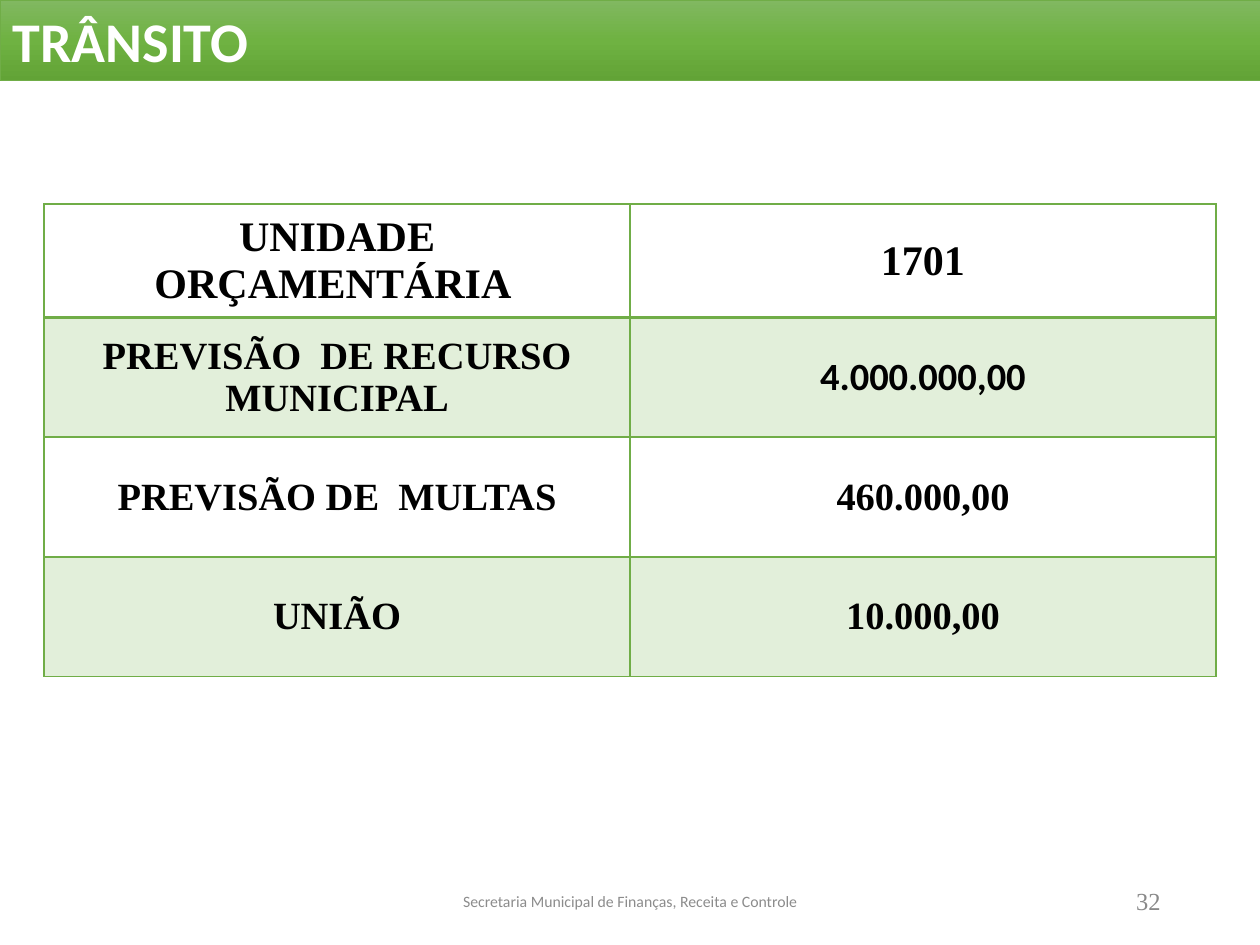
from copy import deepcopy

from lxml import etree
from pptx import Presentation
from pptx.dml.color import RGBColor
from pptx.enum.text import MSO_ANCHOR, MSO_AUTO_SIZE, PP_ALIGN
from pptx.oxml.ns import qn
from pptx.util import Inches, Pt

LEFT, CENTER, RIGHT = PP_ALIGN.LEFT, PP_ALIGN.CENTER, PP_ALIGN.RIGHT
MIDDLE = MSO_ANCHOR.MIDDLE
NO_AUTOFIT = MSO_AUTO_SIZE.NONE
TITLE_ONLY = 5
SANS, SERIF = "Calibri", "Times New Roman"
COLORS = {
    "green": "70AD47",
    "band": "E2EFDA",
    "white": "FFFFFF",
    "black": "000000",
    "footer": "8C8C8C",
    "number": "898989",
}
BANNER_GRADIENT = [(0, "81B861"), (0.5, "6FB242"), (1, "62A336")]
BUDGET = [
    ("UNIDADE ORÇAMENTÁRIA ", "1701"),
    ("PREVISÃO  DE RECURSO MUNICIPAL", "4.000.000,00"),
    ("PREVISÃO DE  MULTAS", "460.000,00"),
    ("UNIÃO", "10.000,00"),
]


def rgb(name):
    """Return the named colour."""
    return RGBColor.from_string(COLORS[name])


def write(frame, text, font, size, color, align, bold=False):
    """Put one formatted, vertically centred paragraph in a text frame."""
    frame.text = text
    frame.vertical_anchor = MIDDLE
    paragraph = frame.paragraphs[0]
    paragraph.alignment = align
    style = paragraph.runs[0].font
    style.name, style.size, style.bold = font, Pt(size), bold
    style.color.rgb = rgb(color)


def add_banner(slide, text):
    """Turn the title placeholder into the green gradient banner."""
    banner = slide.shapes.title
    banner.left, banner.top = Inches(0), Inches(0)
    banner.width, banner.height = Inches(10), Inches(0.64)
    banner.fill.gradient()
    banner.fill.gradient_angle = 270
    first_stop = banner.fill.gradient_stops[0]
    stop_list = banner._element.spPr.find(".//" + qn("a:gsLst"))
    stop_list.append(deepcopy(stop_list[0]))
    first_stop = None
    for stop, (position, color) in zip(banner.fill.gradient_stops, BANNER_GRADIENT):
        stop.position = position
        stop.color.rgb = RGBColor.from_string(color)
    banner.line.color.rgb = rgb("green")
    banner.line.width = Pt(0.5)
    banner.text_frame.auto_size = NO_AUTOFIT
    write(banner.text_frame, text, SANS, 32, "white", LEFT, bold=True)


def add_label(slide, left, width, text, font, size, color, align):
    """Add a text box on the footer line."""
    label = slide.shapes.add_textbox(
        Inches(left), Inches(6.95), Inches(width), Inches(0.4))
    label.text_frame.word_wrap = True
    write(label.text_frame, text, font, size, color, align)


def set_borders(cell, bottom_width, top_width):
    """Draw green lines around a cell."""
    properties = cell._tc.get_or_add_tcPr()
    widths = {"lnL": 1, "lnR": 1, "lnT": top_width, "lnB": bottom_width}
    for index, (side, width) in enumerate(widths.items()):
        line = etree.Element(qn(f"a:{side}"), w=str(Pt(width)))
        fill = etree.SubElement(line, qn("a:solidFill"))
        etree.SubElement(fill, qn("a:srgbClr"), val=COLORS["green"])
        properties.insert(index, line)


def add_budget_table(slide):
    """Add the table of budget forecasts with alternating row fills."""
    table = slide.shapes.add_table(
        len(BUDGET), 2, Inches(0.35), Inches(1.62), Inches(9.3), Inches(3.75)).table
    for row_index, values in enumerate(BUDGET):
        is_header = row_index == 0
        table.rows[row_index].height = Inches(0.9 if is_header else 0.95)
        for column_index, value in enumerate(values):
            cell = table.cell(row_index, column_index)
            font = SANS if value == "4.000.000,00" else SERIF
            size = 24 if is_header else 22
            write(cell.text_frame, value, font, size, "black", CENTER, bold=True)
            cell.vertical_anchor = MIDDLE
            cell.fill.solid()
            cell.fill.fore_color.rgb = rgb("band" if row_index % 2 else "white")
            set_borders(cell, 2 if is_header else 1, 2 if row_index == 1 else 1)


def main():
    """Build the traffic budget slide."""
    deck = Presentation()
    deck.slide_width, deck.slide_height = Inches(10), Inches(7.5)
    slide = deck.slides.add_slide(deck.slide_layouts[TITLE_ONLY])
    add_banner(slide, "TRÂNSITO")
    add_budget_table(slide)
    add_label(slide, 3.31, 3.38, "Secretaria Municipal de Finanças, Receita e Controle",
              SANS, 9, "footer", CENTER)
    add_label(slide, 7.06, 2.25, "32", SERIF, 14, "number", RIGHT)
    deck.save("out.pptx")


if __name__ == "__main__":
    main()
